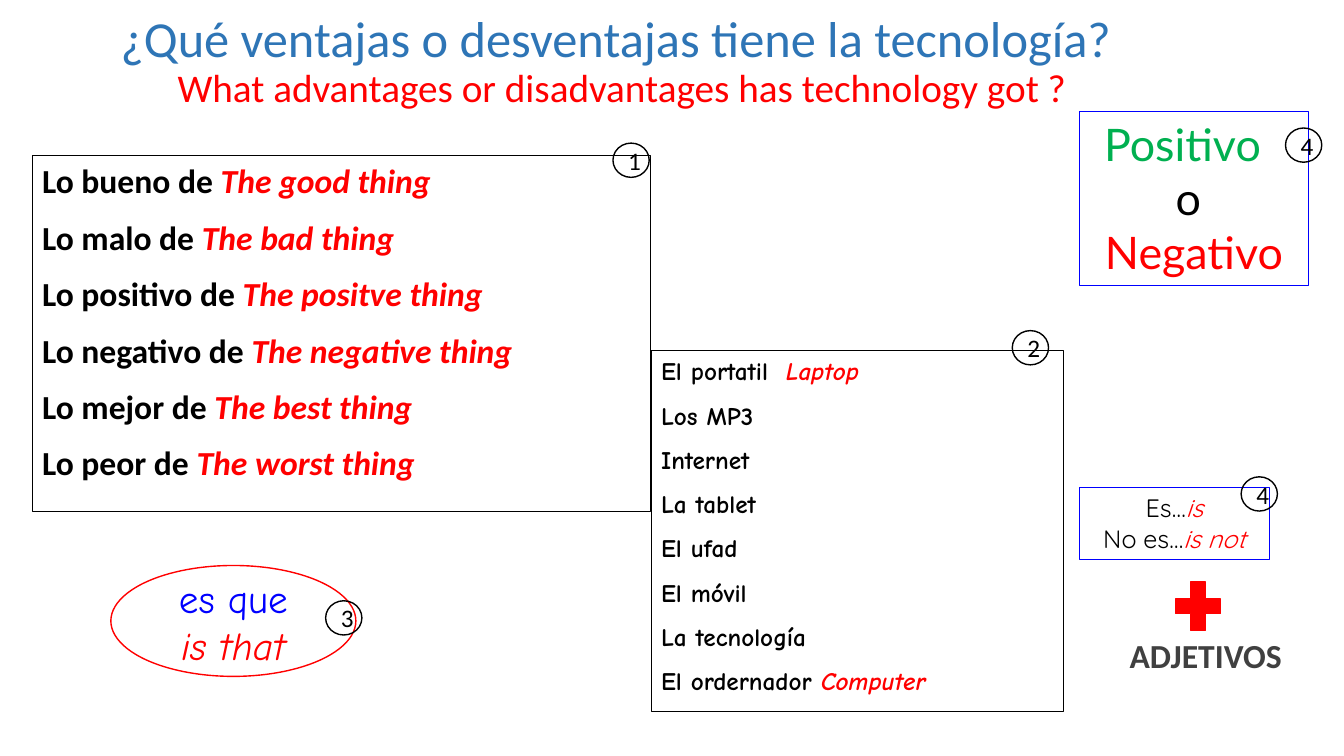
from pptx import Presentation
from pptx.dml.color import RGBColor
from pptx.enum.shapes import MSO_SHAPE
from pptx.enum.text import MSO_ANCHOR, PP_ALIGN
from pptx.util import Inches, Pt

WIDTH, HEIGHT = Inches(13.333), Inches(7.5)
BLACK, RED, BLUE, GREEN = "000000", "FF0000", "0000FF", "00B050"
TITLE_BLUE, GREY, WHITE = "2E75B6", "404040", "FFFFFF"

OPENINGS = [
    ("Lo bueno de ", "The good thing"),
    ("Lo malo de", " The bad thing"),
    ("Lo positivo de ", "The positve thing"),
    ("Lo negativo de ", "The negative thing"),
    ("Lo mejor de ", "The best thing"),
    ("Lo peor de ", "The worst thing"),
]
DEVICES = [
    ("El portatil  ", "Laptop"),
    ("Los MP3",),
    ("Internet",),
    ("La tablet",),
    ("El ufad",),
    ("El móvil",),
    ("La tecnología",),
    ("El ordernador ", "Computer"),
]
VERBS = [("Es…", "is"), ("No es…", "is not")]
BADGES = [
    ("1", 45.61, 18.93),
    ("2", 75.32, 43.73),
    ("3", 24.23, 79.47),
    ("4", 95.65, 16.93),
    ("4", 92.35, 63.07),
]


def rgb(hex_color):
    return RGBColor.from_string(hex_color)


def area(left, top, width, height):
    """Turn percentages of the slide's size into lengths."""
    return [int(share * side / 100) for share, side in
            zip((left, top, width, height), (WIDTH, HEIGHT, WIDTH, HEIGHT))]


def style(run, size, color, font="Calibri", bold=False, italic=False):
    run.font.size = Pt(size)
    run.font.name = font
    run.font.bold = bold
    run.font.italic = italic
    run.font.color.rgb = rgb(color)


def add_outline(slide, kind, place, line, weight=0.75, fill=None):
    outline = slide.shapes.add_shape(kind, *area(*place))
    outline.shadow.inherit = False
    outline.line.color.rgb = rgb(line)
    outline.line.width = Pt(weight)
    if fill:
        outline.fill.solid()
        outline.fill.fore_color.rgb = rgb(fill)
    else:
        outline.fill.background()
    return outline


def write_lines(frame, lines, colors, size, font="Calibri", bold=False,
                align=PP_ALIGN.CENTER):
    """Write one paragraph a line, its colour given by line."""
    frame.word_wrap = True
    frame.text = "\n".join(lines)
    for paragraph, color in zip(frame.paragraphs, colors):
        paragraph.alignment = align
        style(paragraph.runs[0], size, color, font, bold)


def add_translations(frame, pairs, size, font, bold=False, gap=0,
                     align=PP_ALIGN.LEFT):
    """Write Spanish in black, each followed by its English in red italics."""
    spanish = [pair[0] for pair in pairs]
    write_lines(frame, spanish, [BLACK] * len(pairs), size, font, bold, align)
    for paragraph, pair in zip(frame.paragraphs, pairs):
        paragraph.space_before = Pt(gap)
        for english in pair[1:]:
            run = paragraph.add_run()
            run.text = english
            style(run, size, RED, font, bold, italic=True)


def add_title(slide):
    title = slide.shapes.title
    title.left, title.top, title.width, title.height = area(
        2.33, 2.67, 87.85, 12.67)
    title.text_frame.vertical_anchor = MSO_ANCHOR.BOTTOM
    heading = title.text_frame.paragraphs[0]
    heading.text = ("¿Qué ventajas o desventajas tiene la tecnología? \v"
                    "What advantages or disadvantages has technology got ?")
    heading.alignment = PP_ALIGN.CENTER
    heading.line_spacing = 0.9
    spanish, english = heading.runs
    style(spanish, 36, TITLE_BLUE)
    style(english, 28, RED)


def add_box(slide, place, line=BLACK):
    frame = add_outline(slide, MSO_SHAPE.RECTANGLE, place, line).text_frame
    frame.vertical_anchor = MSO_ANCHOR.TOP
    return frame


def add_badge(slide, number, left, top):
    badge = add_outline(slide, MSO_SHAPE.OVAL, (left, top, 2.7, 4.53),
                        BLACK, 1)
    write_lines(badge.text_frame, [number], [BLACK], 18)


def main():
    deck = Presentation()
    deck.slide_width, deck.slide_height = WIDTH, HEIGHT
    slide = deck.slides.add_slide(deck.slide_layouts[5])
    add_title(slide)

    openings = add_box(slide, (2.4, 20.53, 45.98, 47.07))
    add_translations(openings, OPENINGS, 24, "Calibri", True, 11.5)

    devices = add_box(slide, (48.45, 46.4, 30.68, 47.73))
    add_translations(devices, DEVICES, 18, "Comic Neue", True, 10)

    opinion = add_box(slide, (80.33, 14.8, 17.03, 22.93), BLUE)
    write_lines(opinion, ["Positivo  ", "o ", "Negativo"],
                [GREEN, BLACK, RED], 32, "Lato")

    verbs = add_box(slide, (80.33, 64.53, 14.1, 9.47), BLUE)
    add_translations(verbs, VERBS, 18, "Quicksand", align=PP_ALIGN.CENTER)

    link = add_outline(slide, MSO_SHAPE.OVAL, (8.25, 74.8, 18.23, 14.67),
                       RED, 1, WHITE).text_frame
    write_lines(link, ["es que", "is that"], [BLUE, RED], 28, "Comic Neue")
    link.paragraphs[1].runs[0].font.italic = True

    adjectives = slide.shapes.add_textbox(*area(79.43, 83.33, 20.55, 6.67))
    write_lines(adjectives.text_frame, ["ADJETIVOS"], [GREY], 24, bold=True)
    add_outline(slide, MSO_SHAPE.MATH_PLUS, (86.85, 75.87, 4.58, 8.67),
                RED, 1, RED)

    for badge in BADGES:
        add_badge(slide, *badge)

    deck.save("out.pptx")


if __name__ == "__main__":
    main()
